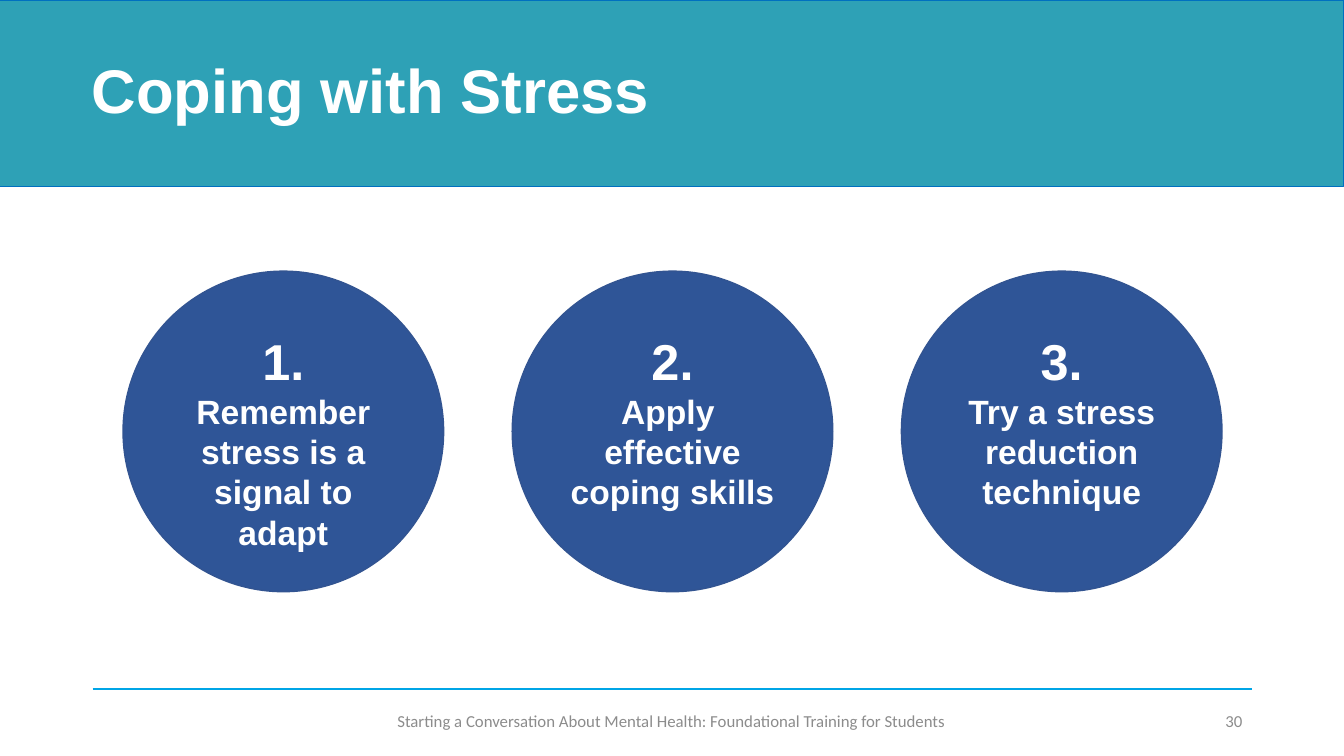
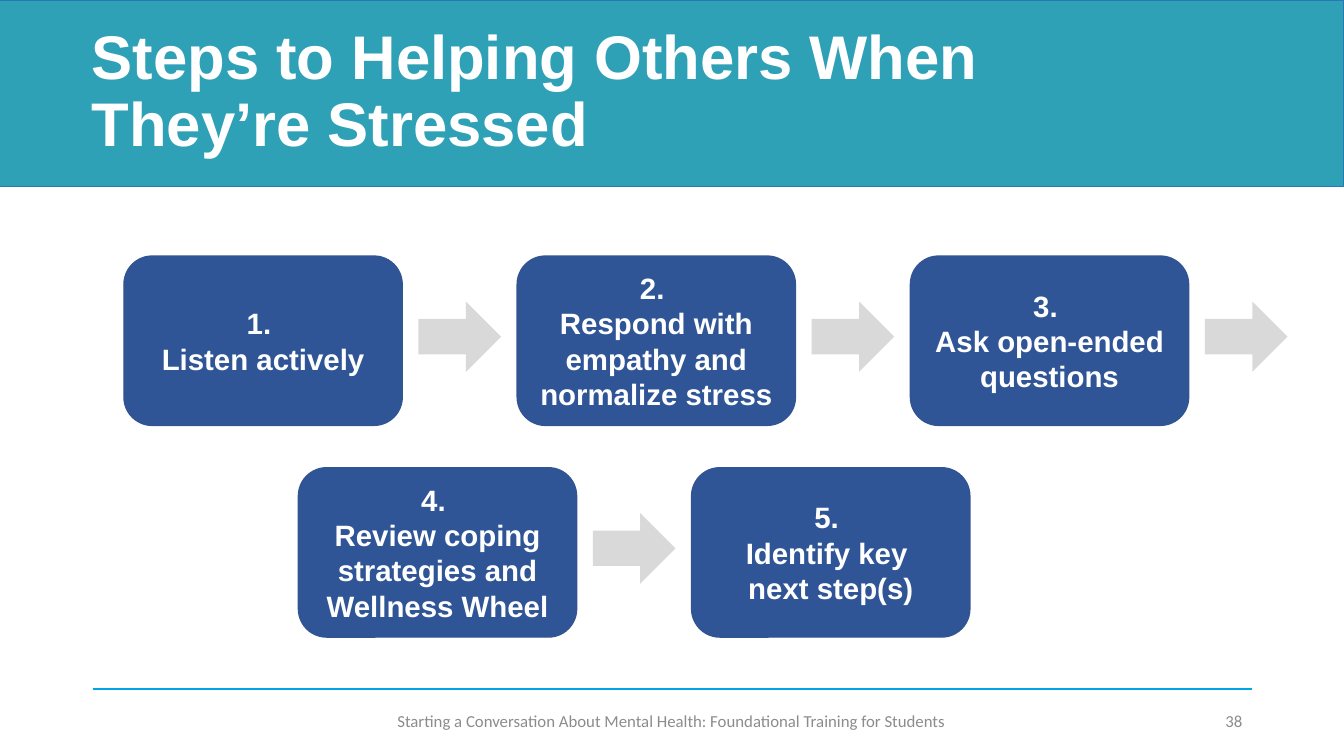
"""Build two slides on coping with stress and helping others."""
from lxml import etree
from pptx import Presentation
from pptx.dml.color import RGBColor
from pptx.enum.shapes import MSO_CONNECTOR, MSO_SHAPE
from pptx.enum.text import MSO_ANCHOR, PP_ALIGN
from pptx.oxml.ns import qn
from pptx.util import Inches, Pt

RECT, OVAL = MSO_SHAPE.RECTANGLE, MSO_SHAPE.OVAL
ROUND, ARROW = MSO_SHAPE.ROUNDED_RECTANGLE, MSO_SHAPE.RIGHT_ARROW
LEFT, CENTER, RIGHT = PP_ALIGN.LEFT, PP_ALIGN.CENTER, PP_ALIGN.RIGHT
TOP, MIDDLE = MSO_ANCHOR.TOP, MSO_ANCHOR.MIDDLE

WIDTH, HEIGHT = 13.33, 7.5
WHITE, TEAL, NAVY, EDGE = "FFFFFF", "2EA1B6", "2F5597", "325491"
SKY, GREY, PALE = "00A5E6", "8C8C8C", "D9D9D9"
FOOTER = "Starting a Conversation About Mental Health: Foundational Training for Students"

POINTS = [
    ["1.", "Remember stress is a signal to adapt"],
    ["2.", "Apply ", "effective coping skills"],
    ["3.", "Try a stress reduction technique"],
]
STEPS = [
    ["1. ", "Listen actively"],
    ["2. ", "Respond with empathy and normalize stress"],
    ["3. ", "Ask open-ended questions"],
    ["4. ", "Review coping strategies and Wellness Wheel"],
    ["5. ", "Identify key \vnext step(s)"],
]


def color(code):
    """Turn a hex string into a colour."""
    return RGBColor.from_string(code)


def write(shape, lines, sizes, font="Arial", ink=WHITE, bold=True, align=CENTER,
          anchor=MIDDLE, inset=(0.1, 0.05, 0.1, 0.05), space=1.0):
    """Fill a shape with paragraphs; the last size serves all further lines."""
    frame = shape.text_frame
    frame.word_wrap = True
    frame.vertical_anchor = anchor
    (frame.margin_left, frame.margin_top,
     frame.margin_right, frame.margin_bottom) = map(Inches, inset)
    for index, line in enumerate(lines):
        para = frame.add_paragraph() if index else frame.paragraphs[0]
        para.text = line
        para.alignment = align
        para.line_spacing = space
        for run in para.runs:
            run.font.name = font
            run.font.size = Pt(sizes[min(index, len(sizes) - 1)])
            run.font.bold = bold
            run.font.color.rgb = color(ink)


def draw(slide, kind, box, fill, edge=None, weight=1):
    """Add a flat preset shape."""
    shape = slide.shapes.add_shape(kind, *map(Inches, box))
    shape.shadow.inherit = False
    shape.fill.solid()
    shape.fill.fore_color.rgb = color(fill)
    if edge:
        shape.line.color.rgb = color(edge)
        shape.line.width = Pt(weight)
    else:
        shape.line.fill.background()
    return shape


def rule(slide, start, end, y):
    """Add the level line above the footer."""
    line = slide.shapes.add_connector(
        MSO_CONNECTOR.STRAIGHT, Inches(start), Inches(y), Inches(end), Inches(y))
    line.line.color.rgb = color(SKY)
    line.line.width = Pt(1.5)
    etree.SubElement(line._element.spPr, qn("a:effectLst"))


def label(slide, text, left, width, align):
    """Add one footer text."""
    box = slide.shapes.add_textbox(*map(Inches, (left, 6.95, width, 0.4)))
    write(box, [text], [12], font="Calibri", ink=GREY, bold=False, align=align)


def start(deck, title, number, edge):
    """Add a slide with its title band and footer."""
    slide = deck.slides.add_slide(deck.slide_layouts[6])
    rule(slide, 0.92, 12.42, 6.84)
    label(slide, number, 9.42, 3, RIGHT)
    label(slide, FOOTER, 3.57, 6.18, CENTER)
    band = draw(slide, RECT, (0, 0, WIDTH, 1.85), TEAL, edge, 0.75)
    write(band, [title], [44], align=LEFT, space=0.9, inset=(0.91, 0.05, 0.1, 0.05))
    return slide


def discs(slide):
    """Lay the three points out as a row of circles."""
    side, pitch = 3.18, 3.86
    for index, lines in enumerate(POINTS):
        disc = draw(slide, OVAL, (1.22 + index * pitch, 2.69, side, side), NAVY, EDGE)
        write(disc, lines, [36, 24], anchor=TOP, inset=(0, 0.12, 0, 0))


def steps(slide):
    """Lay the five steps out in two rows joined by arrows."""
    pitch, split = 3.9, 3
    for index, lines in enumerate(STEPS):
        row, col = divmod(index, split)
        left, top = (1.23, 2.96)[row] + col * pitch, 2.54 + row * 2.1
        card = draw(slide, ROUND, (left, top, 2.76, 1.68), NAVY, EDGE)
        write(card, lines, [21], inset=(0.02, 0, 0.02, 0))
        if index < len(STEPS) - 1:
            draw(slide, ARROW, (left + 2.92, top + 0.45, 0.82, 0.7), PALE)


def main():
    """Build and save the deck."""
    deck = Presentation()
    deck.slide_width, deck.slide_height = Inches(WIDTH), Inches(HEIGHT)
    discs(start(deck, "Coping with Stress", "30", "0070C0"))
    steps(start(deck, "Steps to Helping Others When \vThey’re Stressed", "38", "2E75B6"))
    deck.save("out.pptx")


if __name__ == "__main__":
    main()
